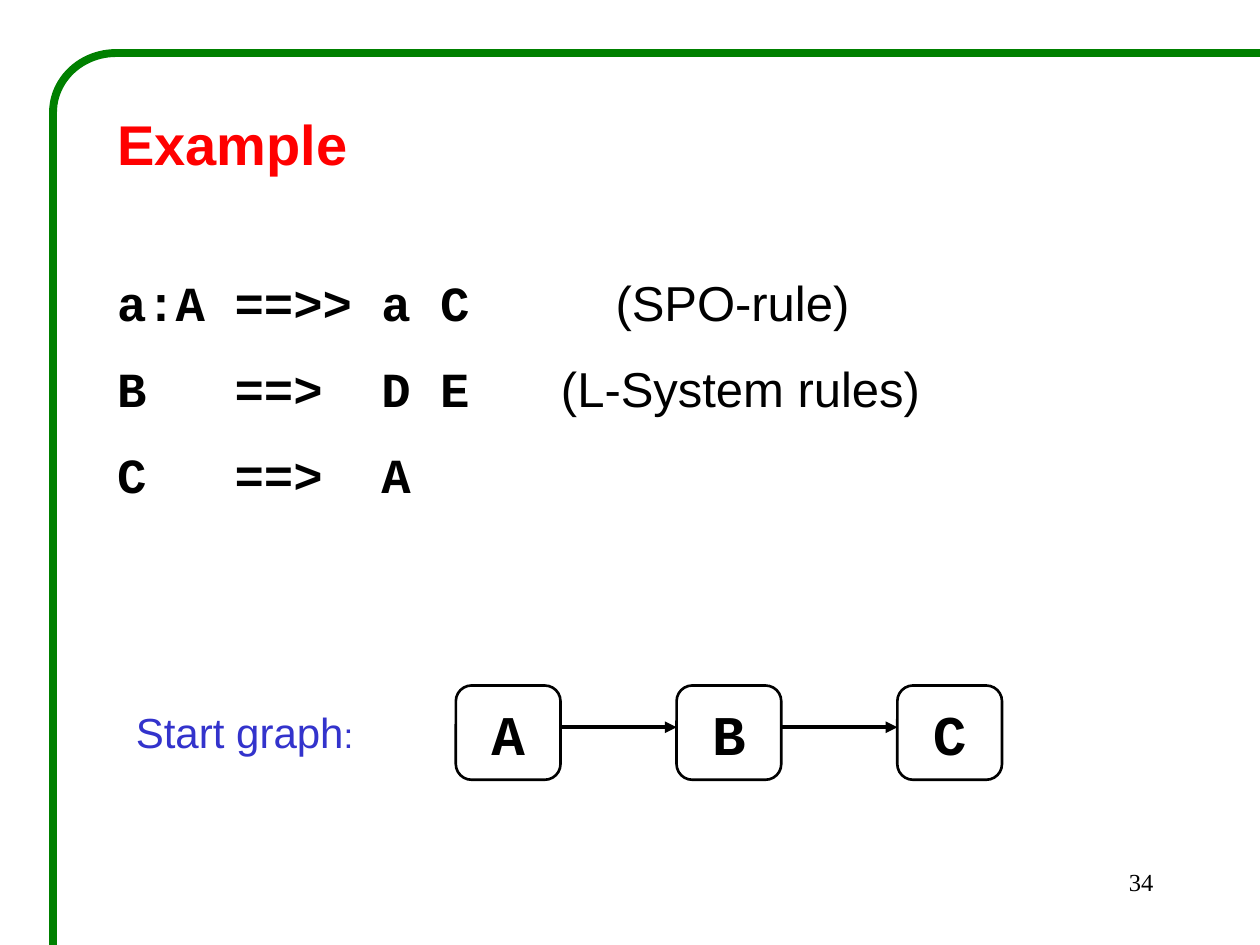
from pptx import Presentation
from pptx.dml.color import RGBColor
from pptx.enum.shapes import MSO_CONNECTOR, MSO_SHAPE
from pptx.enum.text import MSO_ANCHOR, PP_ALIGN
from pptx.oxml.ns import qn
from pptx.util import Cm, Pt
from lxml import etree

STRAIGHT = MSO_CONNECTOR.STRAIGHT
ARC, ROUNDED = MSO_SHAPE.ARC, MSO_SHAPE.ROUNDED_RECTANGLE
TOP, MIDDLE = MSO_ANCHOR.TOP, MSO_ANCHOR.MIDDLE
LEFT, CENTER, RIGHT = PP_ALIGN.LEFT, PP_ALIGN.CENTER, PP_ALIGN.RIGHT

RED = RGBColor(0xFF, 0x00, 0x00)
GREEN = RGBColor(0x00, 0x80, 0x00)
BLUE = RGBColor(0x33, 0x33, 0xCC)
BLACK = RGBColor(0x00, 0x00, 0x00)
SANS, MONO, SERIF = "Arial", "Courier New", "Times New Roman"

RULES = [
    ("a:A\t==>>\ta C", "(SPO-rule)", 10.05),
    ("B\t==>\tD E", "(L-System rules)", 8.95),
    ("C\t==>\tA", None, None),
]
RULE_TABS = (2.37, 5.33)


def add_run(p, text, font, size, color, bold=False):
    """Append a formatted run to a paragraph."""
    r = p.add_run()
    r.text = text
    r.font.name, r.font.size, r.font.bold = font, Pt(size), bold
    r.font.color.rgb = color


def add_text(s, x, y, w, h):
    """Add a wrapping text box and return its text frame."""
    tf = s.shapes.add_textbox(Cm(x), Cm(y), Cm(w), Cm(h)).text_frame
    tf.word_wrap = True
    return tf


def add_line(s, x1, y1, x2, y2, color, width, arrow=False):
    """Draw a straight line, with an arrowhead at its end if asked."""
    line = s.shapes.add_connector(STRAIGHT, Cm(x1), Cm(y1), Cm(x2), Cm(y2))
    line.line.color.rgb = color
    line.line.width = Pt(width)
    if arrow:
        etree.SubElement(line.line._get_or_add_ln(), qn("a:tailEnd"), type="triangle")
    etree.SubElement(line._element.spPr, qn("a:effectLst"))


def set_tabs(p, stops):
    """Give a paragraph left tab stops, in centimetres."""
    tabs = etree.SubElement(p._p.get_or_add_pPr(), qn("a:tabLst"))
    for stop in stops:
        etree.SubElement(tabs, qn("a:tab"), pos=str(Cm(stop)), algn="l")


def add_frame(s, x, y, right, bottom):
    """Draw the top and left border with its rounded corner."""
    w, h = 2.54, 2.39
    add_line(s, x + w / 2, y, right, y, GREEN, 4.5)
    add_line(s, x, y + h / 2, x, bottom, GREEN, 4.5)
    corner = s.shapes.add_shape(ARC, Cm(x), Cm(y), Cm(w), Cm(h))
    corner.adjustments[0] = 108
    corner.adjustments[1] = 162
    corner.shadow.inherit = False
    corner.fill.background()
    corner.line.color.rgb = GREEN
    corner.line.width = Pt(4.5)


def add_title(s, x, y, w, h):
    """Place and format the title placeholder."""
    title = s.shapes.title
    title.left, title.top, title.width, title.height = Cm(x), Cm(y), Cm(w), Cm(h)
    tf = title.text_frame
    tf.vertical_anchor = TOP
    p = tf.paragraphs[0]
    p.alignment = LEFT
    add_run(p, "Example", SANS, 32, RED, True)


def add_rules(s, x, y, w, h):
    """List the grammar rules, aligned by tab stops."""
    tf = add_text(s, x, y, w, h)
    for i, (rule, note, note_tab) in enumerate(RULES):
        p = tf.add_paragraph() if i else tf.paragraphs[0]
        p.space_after = Pt(15.5)
        set_tabs(p, RULE_TABS + ((note_tab,) if note else ()))
        add_run(p, rule, MONO, 28, BLACK, True)
        if note:
            add_run(p, "\t" + note, SANS, 28, BLACK)


def add_start_graph(s, x, y):
    """Draw the label and the chain of nodes joined by arrows."""
    p = add_text(s, x, y + 0.3, 5.87, 1.27).paragraphs[0]
    add_run(p, "Start graph", SANS, 24, BLUE)
    add_run(p, ":", SANS, 20, BLUE)
    w, h, pitch = 2.11, 1.9, 4.45
    names = "ABC"
    for i, name in enumerate(names):
        left = x + 6.7 + i * pitch
        node = s.shapes.add_shape(ROUNDED, Cm(left), Cm(y), Cm(w), Cm(h))
        node.shadow.inherit = False
        node.fill.background()
        node.line.color.rgb = BLACK
        node.line.width = Pt(1.5)
        node.text_frame.vertical_anchor = MIDDLE
        p = node.text_frame.paragraphs[0]
        p.alignment = CENTER
        add_run(p, name, MONO, 32, BLACK, True)
        if i < len(names) - 1:
            add_line(s, left + w, y + 0.84, left + pitch, y + 0.84, BLACK, 2.25, True)


def add_page_number(s, x, y, w, h):
    """Write the page number, aligned right."""
    p = add_text(s, x, y, w, h).paragraphs[0]
    p.alignment = RIGHT
    add_run(p, "34", SERIF, 14, BLACK)


def main():
    """Build and save the slide."""
    prs = Presentation()
    prs.slide_width, prs.slide_height = Cm(25.4), Cm(19.05)
    s = prs.slides.add_slide(prs.slide_layouts[5])
    add_frame(s, 1.07, 1.07, 25.4, 19.05)
    add_title(s, 2.11, 2.08, 21.4, 1.6)
    add_rules(s, 2.11, 5.37, 21.4, 5.2)
    add_start_graph(s, 2.49, 13.82)
    add_page_number(s, 18.2, 17.35, 5.3, 1.27)
    prs.save("out.pptx")


if __name__ == "__main__":
    main()
